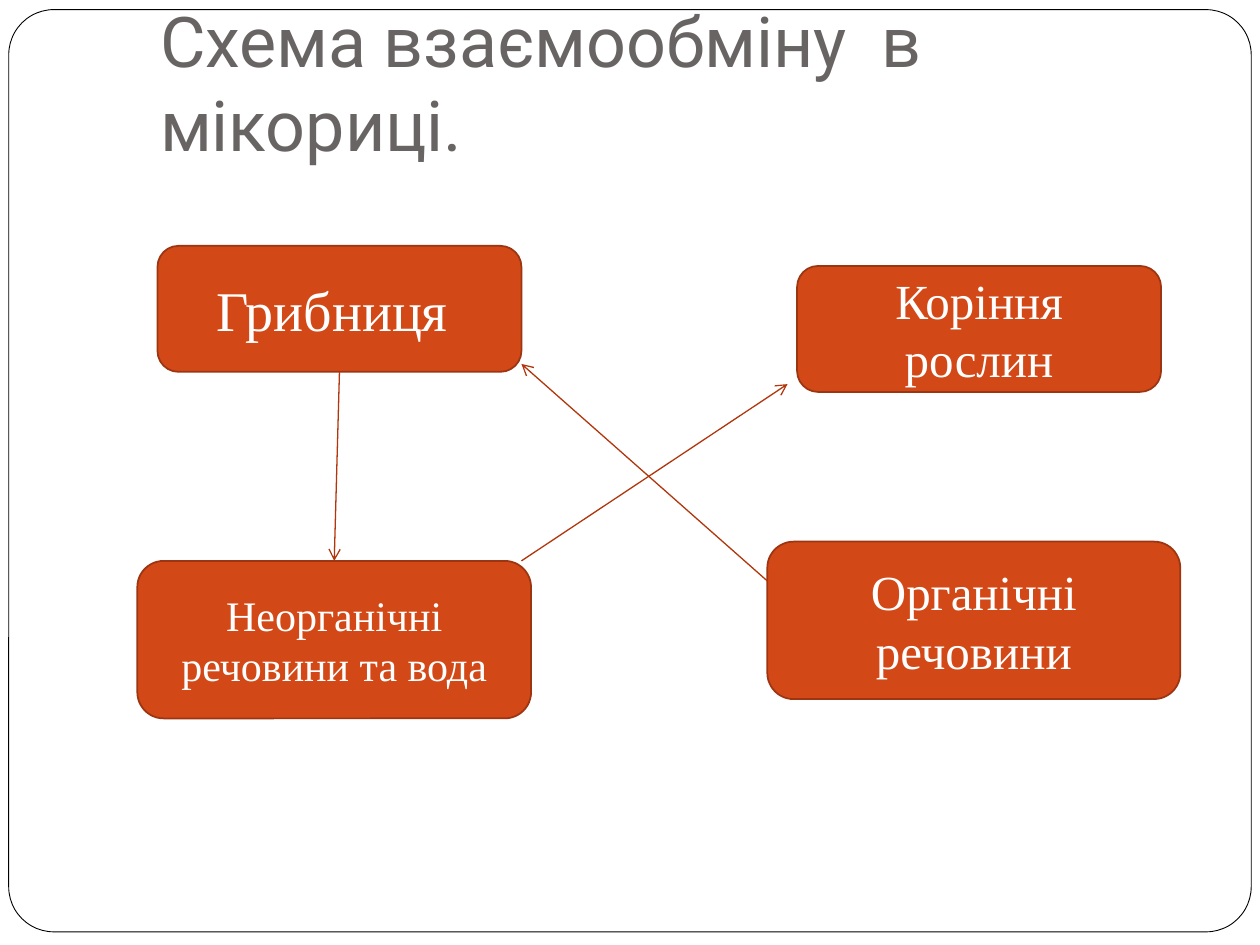
"""Build the slide with the exchange scheme of mycorrhiza."""
from lxml.etree import SubElement
from pptx import Presentation
from pptx.dml.color import RGBColor
from pptx.enum.shapes import MSO_CONNECTOR as CONN, MSO_SHAPE as SHAPE
from pptx.enum.text import MSO_ANCHOR as ANCHOR, MSO_AUTO_SIZE as AUTO, PP_ALIGN as ALIGN
from pptx.oxml.ns import qn
from pptx.util import Pt

WHITE = RGBColor(0xFF, 0xFF, 0xFF)
BLACK = RGBColor(0, 0, 0)
GRAY = RGBColor(0x69, 0x64, 0x64)
ORANGE = RGBColor(0xD3, 0x48, 0x17)
BORDER = RGBColor(0x9C, 0x35, 0x11)
ARROW = RGBColor(0xB1, 0x36, 0x0B)


class Scheme:
    def __init__(self, prs):
        self.title_font, self.box_font = "Roboto", "Times New Roman"
        self.s = prs.slides.add_slide(prs.slide_layouts[5])

    def set_text(self, tf, text, align, color, font, frame):
        for name, value in frame.items():
            setattr(tf, name, value)
        p = tf.paragraphs[0]
        p.alignment = align
        r = p.add_run()
        r.text = text
        for name, value in font.items():
            setattr(r.font, name, value)
        r.font.color.rgb = color

    def rounded(self, x, y, w, h, fill, line, width):
        sp = self.s.shapes.add_shape(SHAPE.ROUNDED_RECTANGLE, Pt(x), Pt(y), Pt(w), Pt(h))
        sp.shadow.inherit = False
        sp.fill.solid()
        sp.fill.fore_color.rgb = fill
        sp.line.color.rgb = line
        sp.line.width = Pt(width)
        return sp

    def frame(self, x, y, w, h):
        sp = self.rounded(x, y, w, h, WHITE, BLACK, 0.5)
        sp.adjustments[0] = 0.049
        self.s.shapes.title._element.addprevious(sp._element)

    def title(self, text, x, y, w, h):
        sp = self.s.shapes.title
        place = {"left": Pt(x), "top": Pt(y), "width": Pt(w), "height": Pt(h)}
        for name, value in place.items():
            setattr(sp, name, value)
        font = {"name": self.title_font, "size": Pt(40)}
        frame = {"word_wrap": True, "auto_size": AUTO.NONE,
                 "vertical_anchor": ANCHOR.BOTTOM, "margin_bottom": Pt(7.2)}
        self.set_text(sp.text_frame, text, ALIGN.LEFT, GRAY, font, frame)

    def box(self, text, size, x, y, w, h):
        sp = self.rounded(x, y, w, h, ORANGE, BORDER, 1)
        font = {"name": self.box_font, "size": Pt(size)}
        frame = {"word_wrap": True, "vertical_anchor": ANCHOR.MIDDLE}
        self.set_text(sp.text_frame, text, ALIGN.CENTER, WHITE, font, frame)

    def arrow(self, *ends):
        c = self.s.shapes.add_connector(CONN.STRAIGHT, *map(Pt, ends))
        c.line.color.rgb = ARROW
        c.line.width = Pt(0.75)
        ln = c._element.spPr.find(qn("a:ln"))
        SubElement(ln, qn("a:tailEnd"), type="arrow")
        SubElement(c._element.spPr, qn("a:effectLst"))


def main():
    prs = Presentation()
    prs.slide_width, prs.slide_height = Pt(720), Pt(540)
    scheme = Scheme(prs)
    scheme.frame(5, 5.5, 710, 527)
    scheme.title("Схема взаємообміну  в мікориці.", 84.24, 21.6, 600, 80)
    for box in (
        ("Грибниця ", 32, 90, 140.5, 208, 72),
        ("Коріння рослин", 28, 455.5, 152, 208, 72),
        ("Органічні речовини", 28, 438.5, 309.5, 236, 90),
        ("Неорганічні речовини та вода", 24, 78.5, 320.5, 225, 90),
    ):
        scheme.box(*box)
    for ends in (
        (194, 212.5, 191, 320.5),
        (438.5, 332, 298, 208),
        (298, 320.5, 450, 219.5),
    ):
        scheme.arrow(*ends)
    prs.save("out.pptx")


if __name__ == "__main__":
    main()
